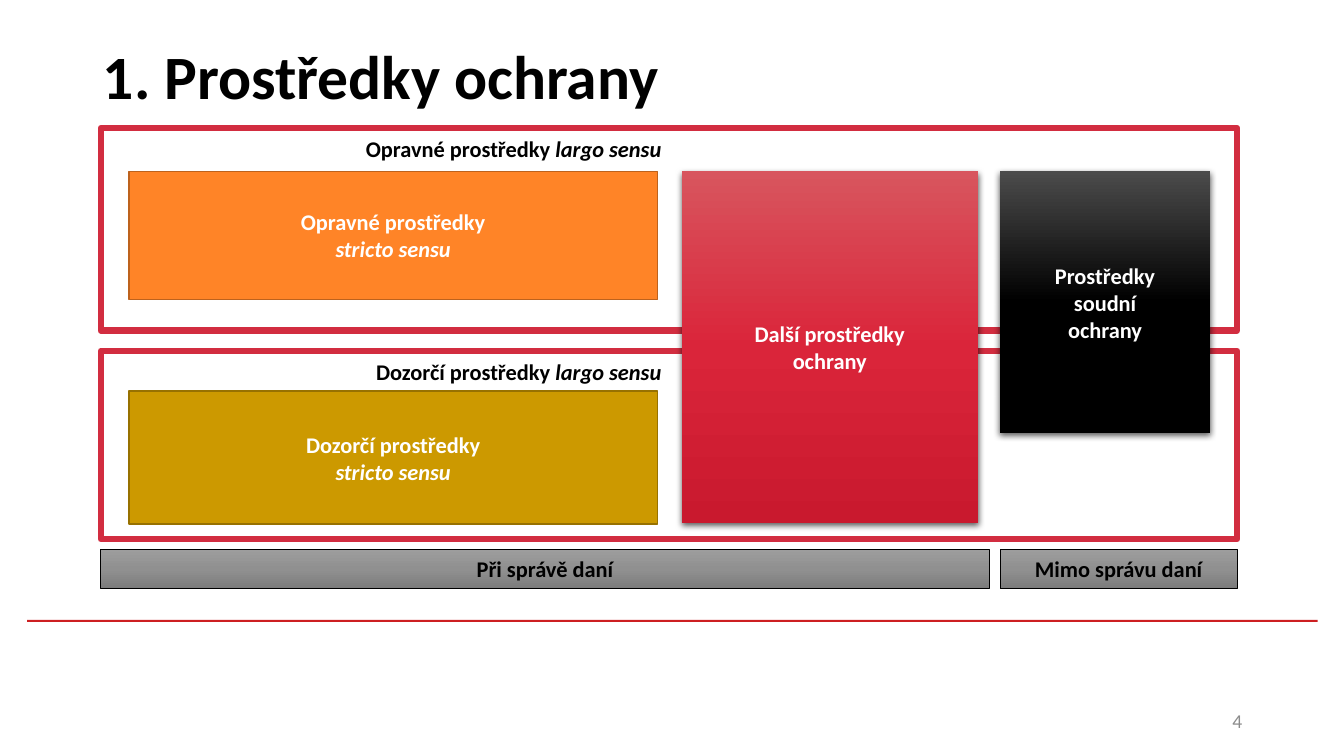
from lxml.etree import SubElement
from pptx import Presentation
from pptx.dml.color import RGBColor
from pptx.enum.shapes import MSO_SHAPE as Shape
from pptx.enum.text import MSO_ANCHOR as Anchor, PP_ALIGN as Align
from pptx.oxml.ns import qn
from pptx.util import Inches, Pt

COLORS = {
    "black": "000000", "white": "FFFFFF", "rule": "CD1F21", "frame": "D22D40",
    "orange": "FF8427", "orange_edge": "BD621D", "gold": "CC9900",
    "gold_edge": "977100", "number": "8C8C8C",
}
GRADIENTS = {
    "red": ("D8555E", "DA253A", "C9192E"),
    "dark": ("4B4B4B", "000000", "000000"),
    "gray": ("9D9D9D", "909090", "7C7C7C"),
}


class SlideBuilder:
    font = "Calibri"

    def __init__(self, slide):
        self.slide = slide

    def color(self, name):
        return RGBColor.from_string(COLORS[name])

    def add_lines(self, frame, lines, size, color, bold=True, align=Align.CENTER, anchor=Anchor.MIDDLE):
        frame.word_wrap = True
        frame.vertical_anchor = anchor
        for index, line in enumerate(lines):
            paragraph = frame.paragraphs[0] if index == 0 else frame.add_paragraph()
            paragraph.alignment = align
            for text, italic in line:
                run = paragraph.add_run()
                run.text = text
                run.font.name = self.font
                run.font.size = Pt(size)
                run.font.bold = bold
                run.font.italic = italic
                run.font.color.rgb = self.color(color)

    def title(self, text):
        shape = self.slide.shapes.title
        shape.left, shape.top, shape.width, shape.height = map(Inches, (0.92, 0.02, 11.5, 1.45))
        self.add_lines(shape.text_frame, [[(text, False)]], 44, "black", align=Align.LEFT)

    def number(self, text):
        box = self.slide.shapes.add_textbox(*map(Inches, (9.42, 6.95, 3, 0.4)))
        self.add_lines(box.text_frame, [[(text, False)]], 14, "number", bold=False, align=Align.RIGHT)

    def gradient(self, shape, name):
        shape.fill.gradient()
        shape.fill.gradient_angle = 270
        stops = shape._element.spPr.find(".//" + qn("a:gsLst"))
        for stop in list(stops):
            stops.remove(stop)
        for index, value in enumerate(GRADIENTS[name]):
            stop = SubElement(stops, qn("a:gs"), pos=str(index * 50000))
            SubElement(stop, qn("a:srgbClr"), val=value)

    def shadow(self, shape):
        effects = shape._element.spPr.find(qn("a:effectLst"))
        outer = SubElement(effects, qn("a:outerShdw"), blurRad=str(Pt(4.5)), dist=str(Pt(1.5)),
                           dir="5400000", rotWithShape="0")
        color = SubElement(outer, qn("a:srgbClr"), val=COLORS["black"])
        SubElement(color, qn("a:alpha"), val="63000")

    def box(self, place, fill, edge=None, weight=1, lines=(), color="white", shadow=False):
        shape = self.slide.shapes.add_shape(Shape.RECTANGLE, *map(Inches, place))
        shape.shadow.inherit = False
        if fill in GRADIENTS:
            self.gradient(shape, fill)
        else:
            shape.fill.solid()
            shape.fill.fore_color.rgb = self.color(fill)
        if edge:
            shape.line.color.rgb = self.color(edge)
            shape.line.width = Pt(weight)
        else:
            shape.line.fill.background()
        if shadow:
            self.shadow(shape)
        self.add_lines(shape.text_frame, lines, 16, color)
        return shape

    def frame(self, top, height, label):
        shape = self.box((1, top, 11.27, height), "white", "frame", 4.5)
        text = shape.text_frame
        text.margin_top = Inches(0.07)
        text.margin_right = Inches(5.71)
        self.add_lines(text, [[(label + " ", False), ("largo sensu", True)]], 16, "black",
                       align=Align.RIGHT, anchor=Anchor.TOP)


def main():
    presentation = Presentation()
    presentation.slide_width, presentation.slide_height = Inches(13.33), Inches(7.5)
    builder = SlideBuilder(presentation.slides.add_slide(presentation.slide_layouts[5]))
    remedies, supervision = "Opravné prostředky", "Dozorčí prostředky"

    builder.box((0.27, 6.15, 12.8, 0.02), "rule")
    builder.title("1. Prostředky ochrany")
    builder.number("4")
    builder.frame(3.48, 1.87, supervision)
    builder.frame(1.27, 2.01, remedies)

    for place, fill, lines in (
        ((6.76, 1.7, 2.94, 3.49), "red", ("Další prostředky", "ochrany")),
        ((9.92, 1.7, 2.08, 2.6), "dark", ("Prostředky", "soudní", "ochrany")),
    ):
        builder.box(place, fill, lines=[[(line, False)] for line in lines], shadow=True)

    for top, height, fill, name in ((1.7, 1.27, "orange", remedies), (3.88, 1.32, "gold", supervision)):
        builder.box((1.28, top, 5.24, height), fill, fill + "_edge",
                    lines=[[(name, False)], [("stricto sensu", True)]])

    for left, width, label in ((1, 8.81, "Při správě daní"), (9.92, 2.35, "Mimo správu daní")):
        builder.box((left, 5.45, width, 0.39), "gray", "black", 0.5, [[(label, False)]], "black")

    presentation.save("out.pptx")


if __name__ == "__main__":
    main()
